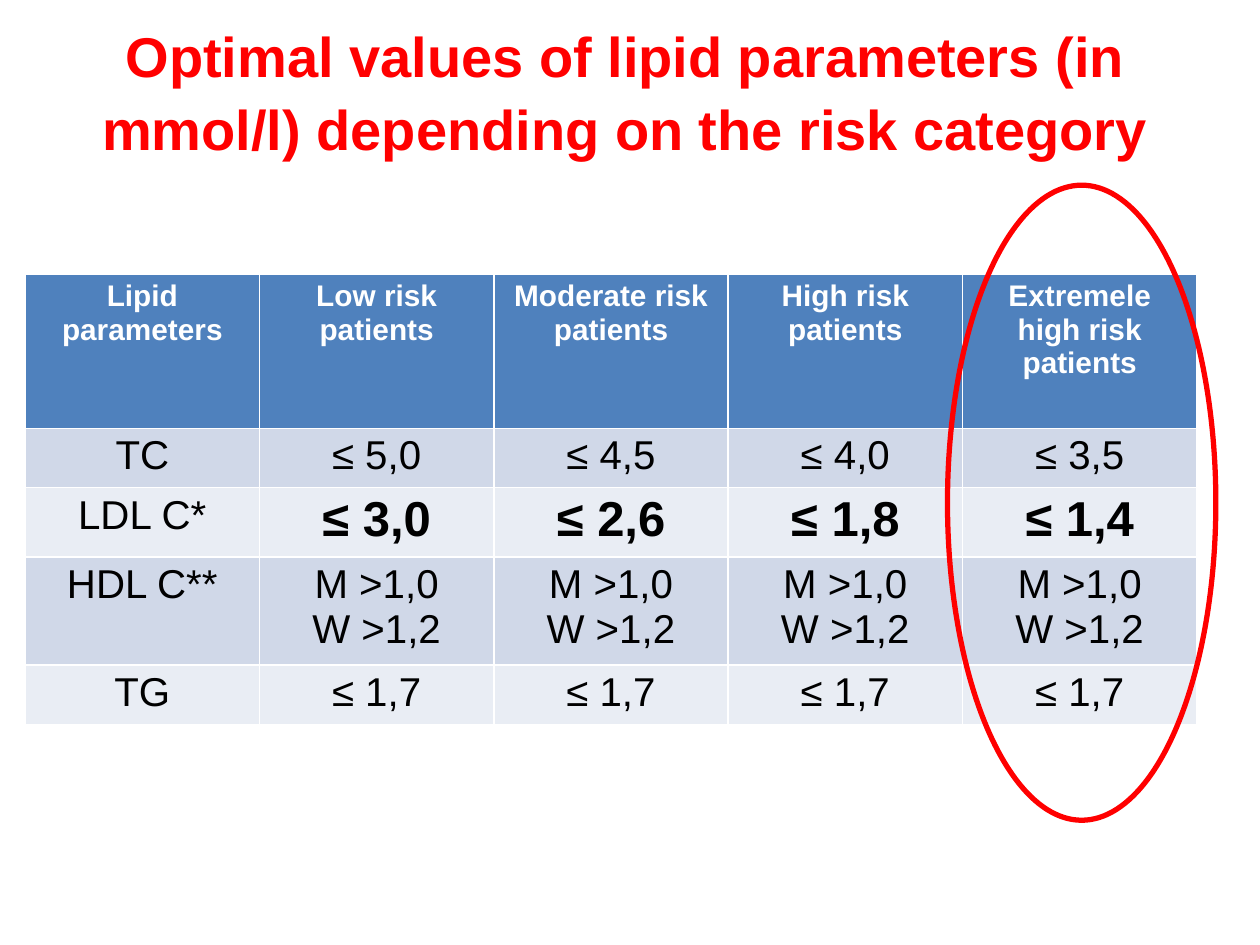
import pptx
import pptx.dml.color
import pptx.enum.shapes
import pptx.enum.text
import pptx.util
from pptx.util import Inches

COLOURS = {"red": "FF0000", "header": "4F81BD", "odd": "D0D8E8",
           "even": "E9EDF4", "white": "FFFFFF", "black": "000000"}
TITLE = "Optimal values of lipid parameters (in mmol/l) depending on the risk category"
FORMATS = {
    "title": {"size": pptx.util.Pt(32), "bold": True, "name": "Arial"},
    "header": {"size": pptx.util.Pt(17), "bold": True, "name": "Arial"},
    "value": {"size": pptx.util.Pt(23), "bold": False, "name": "Arial"},
    "target": {"size": pptx.util.Pt(28), "bold": True, "name": "Arial"},
}
LIPIDS = [
    ["Lipid parameters", "Low risk patients", "Moderate risk patients",
     "High risk patients", "Extremele high risk patients"],
    ["TC", "≤ 5,0", "≤ 4,5", "≤ 4,0", "≤ 3,5"],
    ["LDL C*", "≤ 3,0", "≤ 2,6", "≤ 1,8", "≤ 1,4"],
    ["HDL C**", "M >1,0\nW >1,2"] + ["М >1,0\nW >1,2"] * 3,
    ["TG"] + ["≤ 1,7"] * 4,
]
ROW_HEIGHTS = [1.22, 0.47, 0.55, 0.86, 0.47]


def rgb(colour):
    """Return the named colour as an RGB value."""
    return pptx.dml.color.RGBColor.from_string(COLOURS[colour])


def write(frame, words, style, colour):
    """Fill a text frame with centred paragraphs in one style."""
    frame.text = words
    for paragraph in frame.paragraphs:
        paragraph.alignment = pptx.enum.text.PP_ALIGN.CENTER
        for run in paragraph.runs:
            for attribute, value in FORMATS[style].items():
                setattr(run.font, attribute, value)
            run.font.color.rgb = rgb(colour)


def add_title(slide, left, top, width, height):
    """Place the slide heading in the given box."""
    heading = slide.shapes.add_textbox(left, top, width, height).text_frame
    heading.word_wrap = True
    heading.vertical_anchor = pptx.enum.text.MSO_ANCHOR.MIDDLE
    write(heading, TITLE, "title", "red")
    heading.paragraphs[0].line_spacing = 1.09


def add_lipid_table(slide, left, top, width, height):
    """Place the table of lipid values by risk group in the given box."""
    lipids = slide.shapes.add_table(
        len(LIPIDS), len(LIPIDS[0]), left, top, width, height).table
    for row, row_height in zip(lipids.rows, ROW_HEIGHTS):
        row.height = Inches(row_height)
    for r, values in enumerate(LIPIDS):
        band = "header" if r == 0 else "odd" if r % 2 else "even"
        for c, words in enumerate(values):
            cell = lipids.cell(r, c)
            cell.fill.solid()
            cell.fill.fore_color.rgb = rgb(band)
            cell.margin_top = cell.margin_bottom = Inches(0.04)
            is_target = values[0] == "LDL C*" and c > 0
            style = "header" if r == 0 else "target" if is_target else "value"
            write(cell.text_frame, words, style, "black" if r else "white")


def add_risk_highlight(slide, left, top, width, height):
    """Ring the extreme risk column with an open ellipse."""
    ring = slide.shapes.add_shape(
        pptx.enum.shapes.MSO_SHAPE.OVAL, left, top, width, height)
    ring.shadow.inherit = False
    ring.fill.background()
    ring.line.color.rgb = rgb("red")
    ring.line.width = pptx.util.Pt(3)


def main():
    """Build the slide and save it."""
    deck = pptx.Presentation()
    deck.slide_width, deck.slide_height = Inches(10), Inches(7.5)
    slide = deck.slides.add_slide(deck.slide_layouts[6])
    add_title(slide, Inches(0.16), Inches(0.08), Inches(9.61), Inches(1.25))
    add_lipid_table(slide, Inches(0.2), Inches(2.18), Inches(9.3), Inches(3.57))
    add_risk_highlight(slide, Inches(7.52), Inches(1.47), Inches(2.13), Inches(5.04))
    deck.save("out.pptx")


if __name__ == "__main__":
    main()
